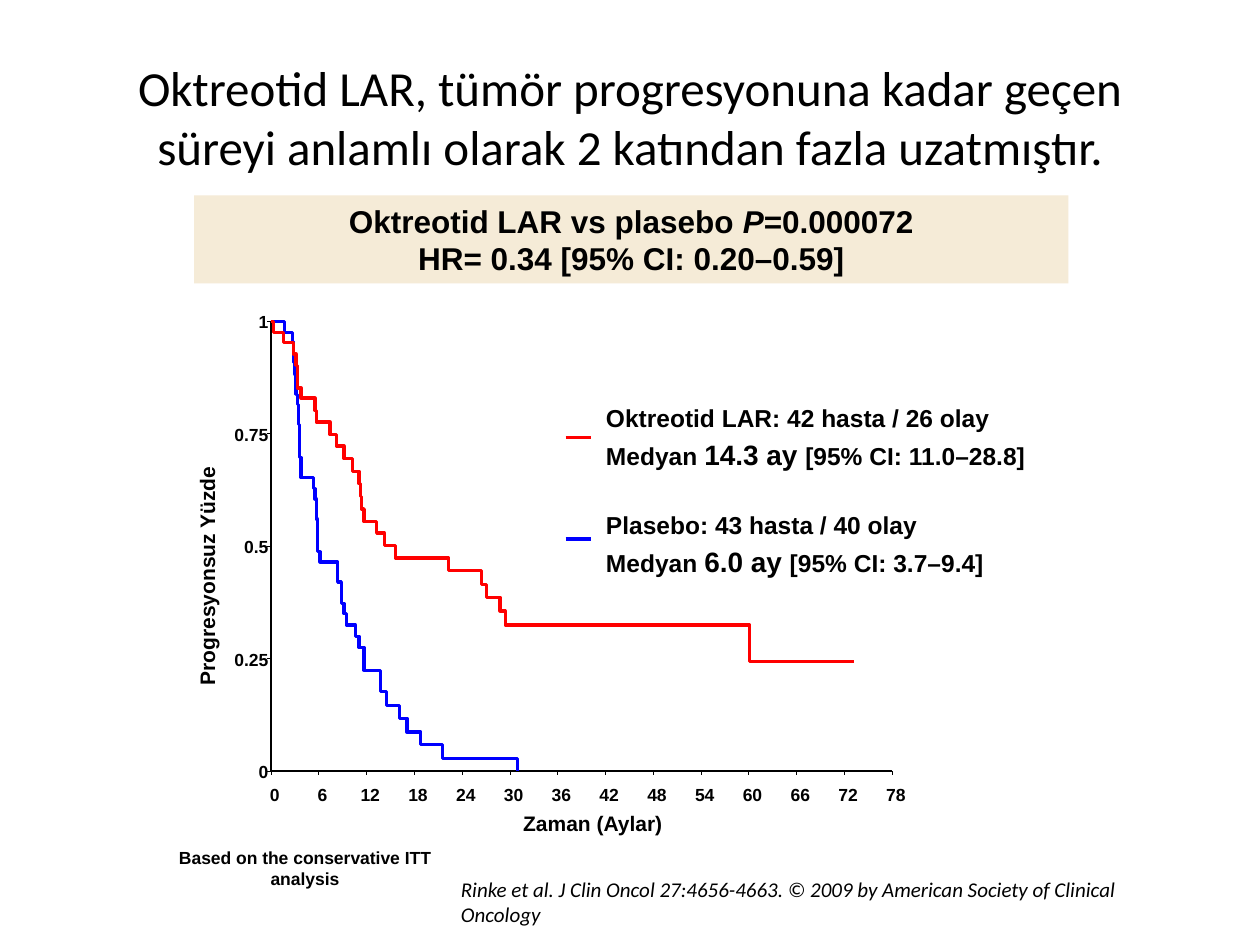
import pptx
import pptx.util
import pptx.dml.color
import pptx.enum.shapes
import pptx.enum.text
import pptx.oxml.ns
from lxml import etree

Inches, Pt = pptx.util.Inches, pptx.util.Pt
ALIGN = pptx.enum.text.PP_ALIGN
ANCHOR = pptx.enum.text.MSO_ANCHOR

COLORS = {"text": "000000", "band": "F5EBD7", "octreotide": "FF0000", "placebo": "0000FF"}

TITLE = ("Oktreotid LAR, tümör progresyonuna kadar geçen "
         "süreyi anlamlı olarak 2 katından fazla uzatmıştır.")
FOOTNOTE = "Based on the conservative ITT analysis"
CITATION = ("Rinke et al. J Clin Oncol 27:4656-4663. "
            "© 2009 by American Society of Clinical Oncology")

# Paragraphs are lists of runs: (text, font overrides)
RESULT = [
    [("Oktreotid LAR vs plasebo ", {}), ("P", {"italic": True}), ("=0.000072", {})],
    [("HR= 0.34 [95% CI: 0.20–0.59]", {})],
]
LEGEND = [
    [("Oktreotid LAR: 42 hasta / 26 olay", {})],
    [("Medyan ", {}), ("14.3 ay ", {"size": Pt(16)}), ("[95% CI: 11.0–28.8]", {})],
    [("Plasebo: 43 hasta / 40 olay", {})],
    [("Medyan ", {}), ("6.0 ay ", {"size": Pt(16)}), ("[95% CI: 3.7–9.4]", {})],
]
LEGEND_GAPS = [0, 3, 22, 3]
LEGEND_KEYS = [("placebo", 4.28, 2.25), ("octreotide", 3.47, 1.88)]

Y_LABELS = ["1", "0.75", "0.5", "0.25", "0"]
X_LABELS = [str(month) for month in range(0, 79, 6)]
LEFT, RIGHT, TOP, BOTTOM = 2.15, 7.08, 2.55, 6.12
TICK = 0.03

# Each curve runs level to x, then drops to y (inches on the slide)
DROPS = {
    "placebo": [
        (2.26, 2.64), (2.32, 2.71), (2.33, 2.88), (2.34, 2.97), (2.35, 3.13),
        (2.36, 3.21), (2.37, 3.37), (2.38, 3.63), (2.39, 3.79), (2.49, 3.88),
        (2.5, 3.96), (2.51, 4.12), (2.52, 4.38), (2.54, 4.46), (2.68, 4.62),
        (2.71, 4.79), (2.73, 4.87), (2.75, 4.96), (2.82, 5.05), (2.85, 5.14),
        (2.89, 5.32), (3.02, 5.49), (3.07, 5.6), (3.17, 5.7), (3.23, 5.81),
        (3.34, 5.91), (3.51, 6.02), (4.11, 6.12)],
    "octreotide": [
        (2.17, 2.64), (2.25, 2.72), (2.33, 2.81), (2.35, 2.9), (2.36, 3.08),
        (2.39, 3.16), (2.5, 3.26), (2.51, 3.35), (2.62, 3.45), (2.67, 3.54),
        (2.73, 3.64), (2.8, 3.74), (2.85, 3.84), (2.86, 3.94), (2.87, 4.04),
        (2.89, 4.14), (2.99, 4.23), (3.05, 4.33), (3.14, 4.43), (3.56, 4.53),
        (3.82, 4.64), (3.86, 4.74), (3.97, 4.85), (4.01, 4.96), (5.95, 5.25),
        (6.78, 5.25)],
}


def rgb(name):
    return pptx.dml.color.RGBColor.from_string(COLORS[name])


def write(s, paragraphs, size, name="Arial", bold=True, italic=False, align=ALIGN.LEFT,
          anchor=ANCHOR.TOP, wrap=True, inset=None, gaps=()):
    """Fill a shape with paragraphs, each a string or a list of runs."""
    tf = s.text_frame
    tf.word_wrap = wrap
    tf.vertical_anchor = anchor
    if inset is not None:
        tf.margin_left = Inches(inset)
        tf.margin_right = tf.margin_top = tf.margin_bottom = 0
    for i, runs in enumerate(paragraphs):
        p = tf.paragraphs[0] if i == 0 else tf.add_paragraph()
        p.alignment = align
        if gaps:
            p.space_before = Pt(gaps[i])
        p.font.name, p.font.size = name, Pt(size)
        p.font.bold, p.font.italic = bold, italic
        p.font.color.rgb = rgb("text")
        for text, overrides in [(runs, {})] if isinstance(runs, str) else runs:
            r = p.add_run()
            r.text = text
            for key, value in overrides.items():
                setattr(r.font, key, value)


def add_text(shapes, box, paragraphs, size, **style):
    s = shapes.add_textbox(*map(Inches, box))
    write(s, paragraphs, size, **style)
    return s


def add_line(shapes, x1, y1, x2, y2, color, width):
    s = shapes.add_connector(pptx.enum.shapes.MSO_CONNECTOR.STRAIGHT,
                             *map(Inches, (x1, y1, x2, y2)))
    s.line.color.rgb = rgb(color)
    s.line.width = Pt(width)
    etree.SubElement(s._element.spPr, pptx.oxml.ns.qn("a:effectLst"))


def add_curve(shapes, group):
    points, level = [], TOP
    for x, y in DROPS[group]:
        points += [(x, level), (x, y)]
        level = y
    builder = shapes.build_freeform(Inches(LEFT), Inches(TOP), scale=1.0)
    builder.add_line_segments([(Inches(x), Inches(y)) for x, y in points], close=False)
    s = builder.convert_to_shape()
    s.shadow.inherit = False
    s.fill.background()
    s.line.color.rgb = rgb(group)
    s.line.width = Pt(1.88)


def add_axes(shapes):
    add_line(shapes, LEFT, TOP, LEFT, BOTTOM, "text", 1.5)
    add_line(shapes, LEFT, BOTTOM, RIGHT, BOTTOM, "text", 1.5)
    y_step = (BOTTOM - TOP) / (len(Y_LABELS) - 1)
    for i, label in enumerate(Y_LABELS):
        y = TOP + i * y_step
        add_line(shapes, LEFT - TICK, y, LEFT, y, "text", 0.25)
        add_text(shapes, (1.81, y - 0.08, 0.32, 0.17), [label], 10,
                 align=ALIGN.RIGHT, wrap=False, inset=0)
    x_step = (RIGHT - LEFT) / (len(X_LABELS) - 1)
    for i, label in enumerate(X_LABELS):
        x = LEFT + i * x_step
        add_line(shapes, x, BOTTOM + TICK, x, BOTTOM, "text", 0.25)
        add_text(shapes, (x - 0.06, BOTTOM + 0.1, 0.18, 0.17), [label], 10,
                 align=ALIGN.CENTER, wrap=False, inset=0)
    add_text(shapes, (4, 6.43, 1.41, 0.28), ["Zaman (Aylar)"], 12,
             align=ALIGN.CENTER, inset=0)
    s = add_text(shapes, (0.41, 4.21, 2.51, 0.25), ["Progresyonsuz Yüzde"], 12, inset=0.15)
    s.rotation = 270


def main():
    prs = pptx.Presentation()
    prs.slide_width, prs.slide_height = Inches(10), Inches(7.5)
    shapes = prs.slides.add_slide(prs.slide_layouts[6]).shapes

    add_text(shapes, (0.5, 0.3, 9, 1.25), [TITLE], 28, name="Calibri", bold=False,
             align=ALIGN.CENTER, anchor=ANCHOR.MIDDLE)
    band = shapes.add_shape(pptx.enum.shapes.MSO_SHAPE.RECTANGLE,
                            *map(Inches, (1.54, 1.55, 6.94, 0.7)))
    band.shadow.inherit = False
    band.fill.solid()
    band.fill.fore_color.rgb = rgb("band")
    band.line.fill.background()
    write(band, RESULT, 18, align=ALIGN.CENTER, anchor=ANCHOR.MIDDLE)

    add_text(shapes, (4.76, 3.2, 3.46, 1.4), LEGEND, 14, inset=0.05, gaps=LEGEND_GAPS)
    for group, y, width in LEGEND_KEYS:
        add_line(shapes, 4.49, y, 4.69, y, group, width)

    add_axes(shapes)
    for group in DROPS:
        add_curve(shapes, group)

    add_text(shapes, (1.32, 6.67, 2.2, 0.44), [FOOTNOTE], 10, align=ALIGN.CENTER)
    add_text(shapes, (3.56, 6.91, 5.56, 0.5), [CITATION], 12, name="Calibri",
             bold=False, italic=True)
    prs.save("out.pptx")


if __name__ == "__main__":
    main()
